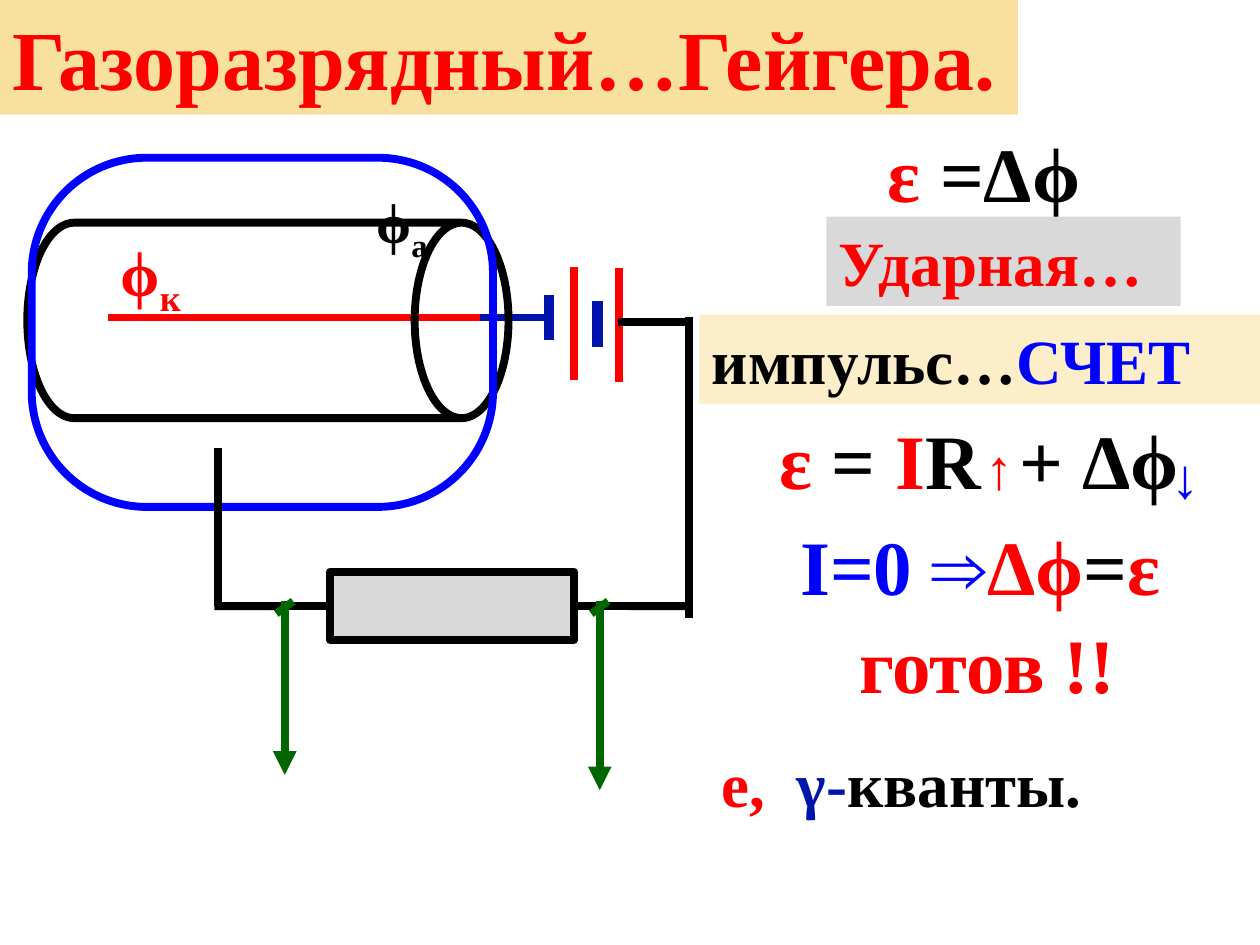
from lxml.etree import SubElement
from pptx import Presentation
from pptx.dml.color import RGBColor
from pptx.enum.shapes import MSO_CONNECTOR, MSO_SHAPE
from pptx.enum.text import MSO_ANCHOR, MSO_AUTO_SIZE, PP_ALIGN
from pptx.oxml.ns import qn
from pptx.util import Cm, Pt

RED = RGBColor(0xFF, 0x00, 0x00)
BLUE = RGBColor(0x00, 0x00, 0xFF)
NAVY = RGBColor(0x00, 0x14, 0xAC)
GREEN = RGBColor(0x00, 0x66, 0x00)
BLACK = RGBColor(0x00, 0x00, 0x00)
GRAY = RGBColor(0xD9, 0xD9, 0xD9)
GOLD = RGBColor(0xF8, 0xE1, 0x9F)
CREAM = RGBColor(0xFB, 0xEE, 0xC9)
FONT = "Times New Roman"


def write(sp, size, runs, wrap=False, fill=None, anchor=MSO_ANCHOR.MIDDLE,
          auto_size=MSO_AUTO_SIZE.SHAPE_TO_FIT_TEXT):
    """Fill a shape with one paragraph; a run is (text, colour[, baseline])."""
    if fill is not None:
        sp.fill.solid()
        sp.fill.fore_color.rgb = fill
    tf = sp.text_frame
    frame = {"word_wrap": wrap, "vertical_anchor": anchor, "auto_size": auto_size,
             "margin_left": Cm(0.25), "margin_right": Cm(0.25),
             "margin_top": Cm(0.13), "margin_bottom": Cm(0.13)}
    for name, value in frame.items():
        setattr(tf, name, value)
    p = tf.paragraphs[0]
    p.alignment = PP_ALIGN.LEFT
    p.line_spacing = 1.0
    for text, color, *baseline in runs:
        r = p.add_run()
        r.text = text
        for name, value in {"name": FONT, "size": Pt(size), "bold": True}.items():
            setattr(r.font, name, value)
        r.font.color.rgb = color
        if baseline:
            r.font._element.set("baseline", str(baseline[0]))
    return p


def add_line(x1, y1, x2, y2, color, width=4.5, arrow=False):
    cxn = s.shapes.add_connector(MSO_CONNECTOR.STRAIGHT, Cm(x1), Cm(y1), Cm(x2), Cm(y2))
    cxn.line.color.rgb = color
    cxn.line.width = Pt(width)
    if arrow:
        SubElement(cxn.line._get_or_add_ln(), qn("a:tailEnd"), type="triangle")
    SubElement(cxn._element.spPr, qn("a:effectLst"))
    return cxn


prs = Presentation()
prs.slide_width, prs.slide_height = Cm(25.4), Cm(19.05)
s = prs.slides.add_slide(prs.slide_layouts[5])

title = s.shapes.title
for name, value in {"left": 0, "top": 0, "width": Cm(20.52), "height": Cm(2.31)}.items():
    setattr(title, name, value)
write(title, 48, [("Газоразрядный…Гейгера.", RED)], fill=GOLD)

# Battery and anode wire
for x, y, height, color, width in [(11.07, 5.94, 0.92, NAVY, 6), (11.58, 5.38, 2.29, RED, 4.5),
                                   (12.04, 6.07, 0.92, NAVY, 6), (12.47, 5.41, 2.29, RED, 4.5)]:
    add_line(x, y, x, y + height, color, width)
add_line(11, 6.4, 9.19, 6.4, NAVY)
add_line(9.68, 6.4, 2.18, 6.4, RED)

# Cathode cylinder, resistor and glass envelope
outlines = [
    (MSO_SHAPE.CAN, (3.43, 1.61, 3.94, 9.7), 0.48, 90, None, BLACK),
    (MSO_SHAPE.RECTANGLE, (6.65, 11.53, 4.93, 1.37), None, 0, GRAY, BLACK),
    (MSO_SHAPE.ROUNDED_RECTANGLE, (0.64, 3.18, 9.3, 7.04), 0.33, 0, None, BLUE),
]
drawn = []
for kind, box, adj, rotation, fill, color in outlines:
    sp = s.shapes.add_shape(kind, *map(Cm, box))
    sp.shadow.inherit = False
    sp.rotation = rotation
    if adj is not None:
        sp.adjustments[0] = adj
    if fill is None:
        sp.fill.background()
    else:
        sp.fill.solid()
        sp.fill.fore_color.rgb = fill
    sp.line.color.rgb = color
    sp.line.width = Pt(4.5)
    drawn.append(sp)
resistor = drawn[1]

# Circuit wires
add_line(13.87, 6.5, 12.45, 6.5, BLACK)
add_line(13.89, 6.4, 13.89, 12.45, BLACK)
add_line(4.39, 12.22, 4.39, 9.04, BLACK)
add_line(13.89, 12.22, 11.58, 12.22, BLACK).end_connect(resistor, 3)
add_line(6.65, 12.22, 4.32, 12.22, BLACK).begin_connect(resistor, 1)

# Electrode potentials
for box, size, letter, color in [((7.34, 3.66, 1.98, 1.7), 32, "а", BLACK),
                                 ((2.18, 4.57, 2.18, 1.6), 36, "к", RED)]:
    tb = s.shapes.add_textbox(*map(Cm, box))
    p = write(tb, size, [("ϕ", color), (letter, color, -25000)], wrap=True,
              anchor=MSO_ANCHOR.TOP, auto_size=MSO_AUTO_SIZE.NONE)
    p.space_after = Pt(10)

# Formulas and notes: box, size, runs, wrap, fill
notes = [
    ((17.65, 2.39, 4.39, 2.13), 44, [("ε", RED), (" =Δϕ", BLACK)], False, None),
    ((16.66, 4.37, 7.14, 1.8), 36, [("Ударная…", RED)], True, GRAY),
    ((14.1, 6.35, 11.3, 1.8), 36, [("импульс…", BLACK), ("СЧЕТ", BLUE)], True, CREAM),
    ((15.47, 8.18, 8.61, 2.13), 44,
     [("ε", RED), (" = ", BLACK), ("I", RED), ("R  + Δϕ", BLACK)], False, None),
    ((15.88, 10.31, 8.23, 2.13), 44,
     [("I=0 ⇒", BLUE), ("Δϕ", RED), ("=", BLACK), ("ε", RED)], False, None),
    ((17.07, 12.29, 5.72, 2.13), 44, [("готов !!", RED)], False, None),
    ((14.3, 14.88, 9.32, 1.8), 36,
     [("е,  ", RED), ("γ-", NAVY), ("кванты.", BLACK)], True, None),
    ((19.61, 8.61, 0.99, 1.63), 32, [("↑", RED)], True, None),
    ((23.37, 8.79, 1.19, 1.63), 32, [("↓", BLUE)], False, None),
]
for box, size, runs, wrap, fill in notes:
    write(s.shapes.add_textbox(*map(Cm, box)), size, runs, wrap, fill)

# Output leads
for x, bottom in [(5.74, 15.62), (12.09, 15.93)]:
    add_line(x, 12.12, x, bottom, GREEN, arrow=True)
    add_line(x + 0.17, 12.12, x - 0.17, 12.37, GREEN)

prs.save("out.pptx")
